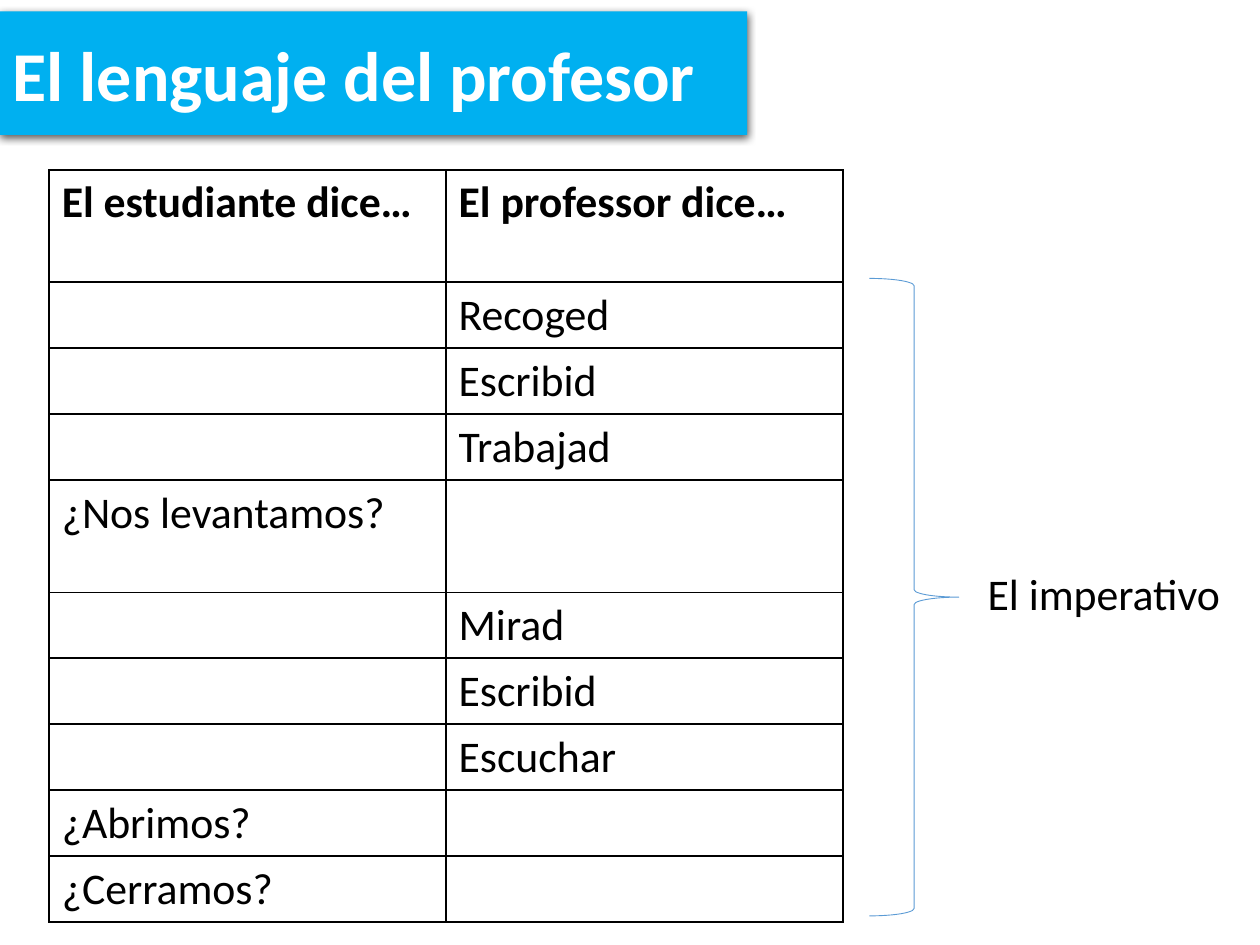
from typing import NamedTuple

from lxml import etree
from pptx import Presentation
from pptx.dml.color import RGBColor
from pptx.enum.shapes import MSO_SHAPE
from pptx.enum.text import MSO_ANCHOR, MSO_AUTO_SIZE, PP_ALIGN
from pptx.oxml import parse_xml
from pptx.util import Inches, Pt

BRACE = MSO_SHAPE.RIGHT_BRACE
MIDDLE = MSO_ANCHOR.MIDDLE
LEFT = PP_ALIGN.LEFT
NO_FIT = MSO_AUTO_SIZE.NONE
GROW = MSO_AUTO_SIZE.SHAPE_TO_FIT_TEXT

BLACK = RGBColor(0, 0, 0)
WHITE = RGBColor(255, 255, 255)
CYAN = RGBColor(0x00, 0xB0, 0xF0)
BLUE = RGBColor(0x5B, 0x9B, 0xD5)

FONT = "Calibri"
BODY = 25
NS = "http://schemas.openxmlformats.org/drawingml/2006/main"
ROUND = f"""<a:prstGeom xmlns:a="{NS}" prst="roundRect">
  <a:avLst><a:gd name="adj" fmla="val 16667"/></a:avLst></a:prstGeom>"""
SHADOW = f"""<a:effectLst xmlns:a="{NS}">
  <a:outerShdw blurRad="{Pt(4.5)}" dist="{Pt(1.5)}" dir="5400000" rotWithShape="0">
    <a:srgbClr val="000000"><a:alpha val="63000"/></a:srgbClr>
  </a:outerShdw></a:effectLst>"""


class Row(NamedTuple):
    student: str = ""
    teacher: str = ""
    height: float = 0.52
    bold: bool = False


ROWS = [
    Row("El estudiante dice…", "El professor dice…", 0.89, True),
    Row(teacher="Recoged"),
    Row(teacher="Escribid"),
    Row(teacher="Trabajad"),
    Row("¿Nos levantamos?", height=0.89),
    Row(teacher="Mirad"),
    Row(teacher="Escribid"),
    Row(teacher="Escuchar"),
    Row("¿Abrimos?"),
    Row("¿Cerramos?"),
]


def write(frame, text: str, size: float, color: RGBColor, bold: bool = False) -> None:
    frame.text = text
    para = frame.paragraphs[0]
    para.alignment = LEFT
    for run in para.runs:
        font = run.font
        font.name, font.size, font.bold = FONT, Pt(size), bold
        font.color.rgb = color


def place(shape, left: float, top: float, width: float, height: float) -> None:
    shape.left, shape.top = Inches(left), Inches(top)
    shape.width, shape.height = Inches(width), Inches(height)


def add_title(slide) -> None:
    title = slide.shapes.title
    place(title, 0, 0.09, 5.93, 0.98)
    props = title.element.spPr
    props.append(parse_xml(ROUND))
    title.fill.solid()
    title.fill.fore_color.rgb = CYAN
    title.line.fill.background()
    props.append(parse_xml(SHADOW))
    frame = title.text_frame
    frame.auto_size = NO_FIT
    frame.vertical_anchor = MIDDLE
    write(frame, "El lenguaje del profesor", 40, WHITE, True)


def add_borders(cell) -> None:
    props = cell._tc.get_or_add_tcPr()
    for side in ("lnL", "lnR", "lnT", "lnB"):
        line = etree.SubElement(props, f"{{{NS}}}{side}", w=str(Pt(1)))
        fill = etree.SubElement(line, f"{{{NS}}}solidFill")
        etree.SubElement(fill, f"{{{NS}}}srgbClr", val=str(BLACK))


def add_grid(slide) -> None:
    high = sum(row.height for row in ROWS)
    table = slide.shapes.add_table(
        len(ROWS), 2, Inches(0.39), Inches(1.35), Inches(6.3), Inches(high)
    ).table
    table.first_row = table.horz_banding = False
    for line, row in zip(table.rows, ROWS):
        line.height = Inches(row.height)
        for cell, text in zip(line.cells, (row.student, row.teacher)):
            add_borders(cell)
            cell.fill.background()
            if text:
                write(cell.text_frame, text, BODY, BLACK, row.bold)


def add_label(slide) -> None:
    """Add the brace beside the table and its caption."""
    brace = slide.shapes.add_shape(
        BRACE, Inches(6.9), Inches(2.21), Inches(0.71), Inches(5.06)
    )
    brace.shadow.inherit = False
    brace.fill.background()
    brace.line.color.rgb = BLUE
    brace.line.width = Pt(0.5)

    box = slide.shapes.add_textbox(
        Inches(7.74), Inches(4.45), Inches(2.07), Inches(0.52)
    )
    frame = box.text_frame
    frame.word_wrap = False
    frame.auto_size = GROW
    write(frame, "El imperativo", BODY, BLACK)


def main() -> None:
    deck = Presentation()
    deck.slide_width, deck.slide_height = Inches(10), Inches(7.5)
    slide = deck.slides.add_slide(deck.slide_layouts[5])
    add_title(slide)
    add_grid(slide)
    add_label(slide)
    deck.save("out.pptx")


if __name__ == "__main__":
    main()
